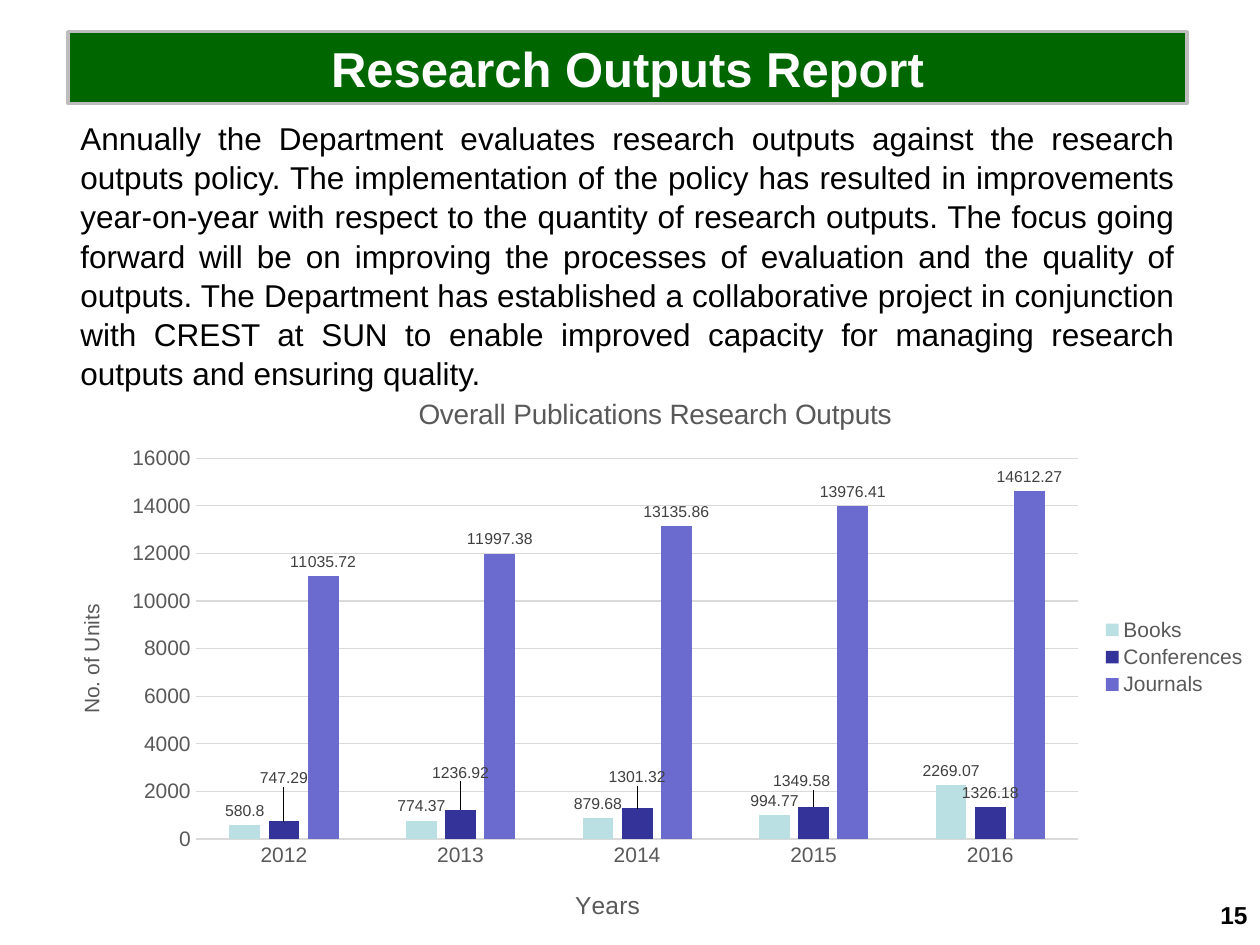
from lxml.etree import SubElement
from pptx import Presentation
from pptx.chart.data import CategoryChartData
from pptx.dml.color import RGBColor
from pptx.enum.chart import XL_CHART_TYPE as ChartType
from pptx.enum.chart import XL_LABEL_POSITION as LabelPosition
from pptx.enum.chart import XL_LEGEND_POSITION as LegendPosition
from pptx.enum.chart import XL_TICK_MARK as TickMark
from pptx.enum.shapes import MSO_SHAPE as Shape
from pptx.enum.text import MSO_ANCHOR as Anchor
from pptx.enum.text import PP_ALIGN as Align
from pptx.oxml.ns import qn
from pptx.oxml.xmlchemy import OxmlElement
from pptx.util import Cm, Pt

FONT = "Arial"
BLACK = RGBColor(0x00, 0x00, 0x00)
WHITE = RGBColor(0xFF, 0xFF, 0xFF)
GREEN = RGBColor(0x00, 0x66, 0x00)
SILVER = RGBColor(0xBD, 0xBD, 0xBD)
GRID_GREY = RGBColor(0xD9, 0xD9, 0xD9)
TEXT_GREY = RGBColor(0x59, 0x59, 0x59)
LABEL_GREY = RGBColor(0x40, 0x40, 0x40)

YEARS = ["2012", "2013", "2014", "2015", "2016"]
OUTPUTS = [
    ("Books", RGBColor(0xBB, 0xE0, 0xE3), [580.8, 774.37, 879.68, 994.77, 2269.07]),
    ("Conferences", RGBColor(0x33, 0x33, 0x99), [747.29, 1236.92, 1301.32, 1349.58, 1326.18]),
    ("Journals", RGBColor(0x6B, 0x6B, 0xCF), [11035.72, 11997.38, 13135.86, 13976.41, 14612.27]),
]
CONFERENCE_LABEL_SHIFTS = [(0, -0.05), (0, -0.04), (0, -0.03), (-0.01, -0.02)]
BODY = (
    "Annually the Department evaluates research outputs against the research outputs policy. "
    "The implementation of the policy has resulted in improvements year-on-year with respect "
    "to the quantity of research outputs. The focus going forward will be on improving the "
    "processes of evaluation and the quality of outputs. The Department has established a "
    "collaborative project in conjunction with CREST at SUN to enable improved capacity for "
    "managing research outputs and ensuring quality. "
)


def style_font(font, size, color, bold=False):
    font.name = FONT
    font.size = Pt(size)
    font.bold = bold
    font.color.rgb = color


def write(box, text, size, color, align, bold=False):
    frame = box.text_frame
    frame.word_wrap = True
    frame.text = text
    para = frame.paragraphs[0]
    para.alignment = align
    style_font(para.runs[0].font, size, color, bold)
    return para


def add_text(page, bounds, *text_style):
    return write(page.shapes.add_textbox(*bounds), *text_style)


def add_banner(page, bounds, text):
    banner = page.shapes.add_shape(Shape.RECTANGLE, *bounds)
    banner.shadow.inherit = False
    banner.fill.solid()
    banner.fill.fore_color.rgb = GREEN
    banner.line.color.rgb = SILVER
    banner.line.width = Pt(2)
    banner.text_frame.vertical_anchor = Anchor.MIDDLE
    write(banner, text, 28, WHITE, Align.CENTER, True)


def place(element, index, **settings):
    layout = element.find(qn("c:layout"))
    if layout is None:
        layout = OxmlElement("c:layout")
        element.insert(index, layout)
    manual = SubElement(layout, qn("c:manualLayout"))
    for name, value in settings.items():
        SubElement(manual, qn(f"c:{name}")).set("val", str(value))


def set_title(owner, text, size):
    owner.has_title = True
    title = owner.chart_title if hasattr(owner, "chart_title") else owner.axis_title
    title.text_frame.text = text
    style_font(title.text_frame.paragraphs[0].runs[0].font, size, TEXT_GREY)
    return title


def style_axis(axis, title, size, x, y):
    axis.major_tick_mark = axis.minor_tick_mark = TickMark.NONE
    style_font(axis.tick_labels.font, 12, TEXT_GREY)
    axis_title = set_title(axis, title, size)
    place(axis_title._element, 1, xMode="edge", yMode="edge", x=x, y=y)


def style_line(line):
    line.color.rgb = GRID_GREY
    line.width = Pt(0.75)


def style_labels(labels):
    labels.position = LabelPosition.OUTSIDE_END
    style_font(labels.font, 9, LABEL_GREY)


def style_series(series, color):
    series.format.fill.solid()
    series.format.fill.fore_color.rgb = color
    series.data_labels.show_value = True
    style_labels(series.data_labels)


def shift_labels(series, shifts):
    for index, (x, y) in enumerate(shifts):
        label = series.points[index].data_label
        style_labels(label)
        place(series.data_labels._element.findall(qn("c:dLbl"))[index], 1, x=x, y=y)


def add_outputs_chart(page, bounds):
    data = CategoryChartData()
    data.categories = YEARS
    for name, _, values in OUTPUTS:
        data.add_series(name, values)
    chart = page.shapes.add_chart(ChartType.COLUMN_CLUSTERED, *bounds, data).chart
    style_font(chart.font, 10, BLACK)
    set_title(chart, "Overall Publications Research Outputs", 16)

    style_axis(chart.category_axis, "Years", 14, 0.43, 0.9)
    style_line(chart.category_axis.format.line)
    style_axis(chart.value_axis, "No. of Units", 12, 0.02, 0.4)
    chart.value_axis.format.line.fill.background()
    style_line(chart.value_axis.major_gridlines.format.line)
    chart.value_axis.minimum_scale = 0
    chart.value_axis.maximum_scale = 16000
    chart.value_axis.major_unit = 2000

    chart.has_legend = True
    chart.legend.position = LegendPosition.RIGHT
    chart.legend.include_in_layout = False
    style_font(chart.legend.font, 12, TEXT_GREY)

    plot = chart.plots[0]
    plot.gap_width = 219
    plot.overlap = -27
    plot.vary_by_categories = False
    for series, (_, color, _) in zip(plot.series, OUTPUTS):
        style_series(series, color)
    shift_labels(plot.series[1], CONFERENCE_LABEL_SHIFTS)
    place(chart._chartSpace.chart.plotArea, 0, layoutTarget="inner",
          xMode="edge", yMode="edge", x=0.12, y=0.15, w=0.73, h=0.67)


def main():
    deck = Presentation()
    deck.slide_width, deck.slide_height = Cm(25.4), Cm(19.05)
    page = deck.slides.add_slide(deck.slide_layouts[6])
    body = add_text(page, (Cm(1.37), Cm(2.24), Cm(22.56), Cm(14.05)),
                    BODY, 18, BLACK, Align.JUSTIFY)
    body.space_before = Pt(3.6)
    body.line_spacing = 1.04
    add_outputs_chart(page, (Cm(1.02), Cm(7.52), Cm(24.38), Cm(11.46)))
    add_text(page, (Cm(19.48), Cm(18.01), Cm(5.92), Cm(1.02)),
             "15", 14, BLACK, Align.RIGHT, True)
    add_banner(page, (Cm(1.37), Cm(0.64), Cm(22.56), Cm(1.45)), "Research Outputs Report")
    deck.save("out.pptx")


if __name__ == "__main__":
    main()
